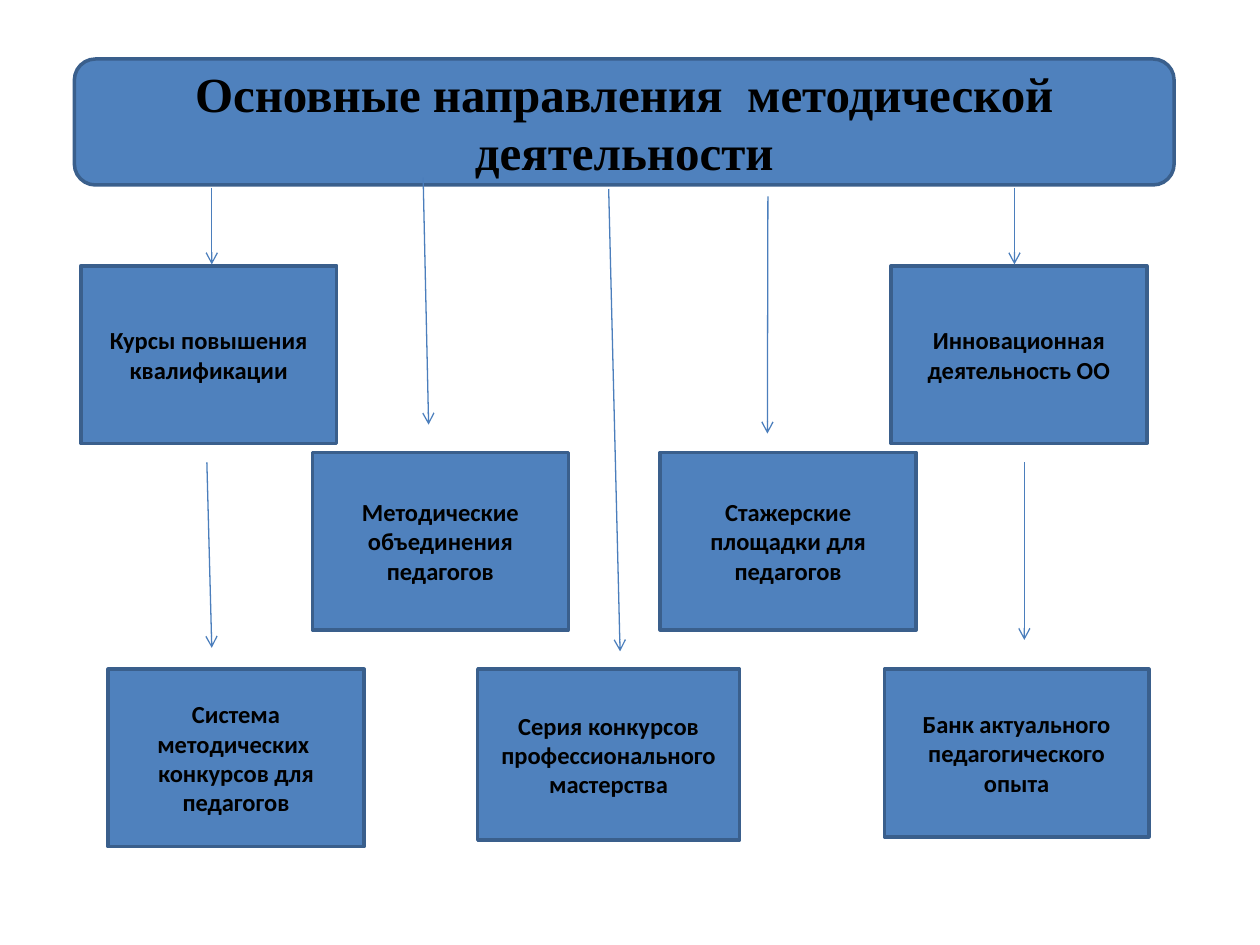
from dataclasses import dataclass

import pptx
import pptx.dml.color
import pptx.enum.shapes
import pptx.enum.text
import pptx.oxml.ns
import pptx.util
from lxml import etree

Cm = pptx.util.Cm
Pt = pptx.util.Pt
Shapes = pptx.enum.shapes.MSO_SHAPE


@dataclass(frozen=True)
class Theme:
    fill: str = "4F81BD"
    border: str = "3A5F8C"
    arrow: str = "4B7EBC"
    text: str = "000000"
    title_font: str = "Times New Roman"
    body_font: str = "Calibri"
    title_size: float = 28
    body_size: float = 14
    border_width: float = 2
    arrow_width: float = 0.75


THEME = Theme()

TITLE = "Основные направления  методической деятельности"
TOP_ROW, MIDDLE_ROW, BOTTOM_ROW = 5.36, 9.12, 13.49
BOX_WIDTH, BOX_HEIGHT = 5.16, 3.58

# Text, left, top, width, height in centimetres
DIRECTIONS = [
    ("Система методических  конкурсов для педагогов", 2.18, BOTTOM_ROW, BOX_WIDTH, BOX_HEIGHT),
    ("Серия конкурсов профессионального мастерства", 9.63, BOTTOM_ROW, 5.28, 3.45),
    ("Методические объединения педагогов", 6.3, MIDDLE_ROW, BOX_WIDTH, BOX_HEIGHT),
    ("Стажерские площадки для педагогов", 13.31, MIDDLE_ROW, BOX_WIDTH, BOX_HEIGHT),
    ("Инновационная деятельность ОО", 17.96, TOP_ROW, BOX_WIDTH, BOX_HEIGHT),
    ("Банк актуального педагогического опыта", 17.83, BOTTOM_ROW, 5.33, 3.38),
    ("Курсы повышения квалификации", 1.63, TOP_ROW, BOX_WIDTH, BOX_HEIGHT),
]

# Start x, start y, end x, end y in centimetres
ARROWS = [
    (8.53, 3.58, 8.64, 8.56),
    (15.48, 3.96, 15.47, 8.74),
    (4.17, 9.32, 4.27, 13.06),
    (4.27, 3.78, 4.27, 5.33),
    (12.27, 3.81, 12.5, 13.13),
    (20.45, 3.78, 20.45, 5.33),
    (20.65, 9.32, 20.65, 12.9),
]


def rgb(code):
    return pptx.dml.color.RGBColor.from_string(code)


def add_box(slide, text, left, top, width, height,
            outline=Shapes.RECTANGLE, font_name=THEME.body_font, size=THEME.body_size):
    box = slide.shapes.add_shape(outline, Cm(left), Cm(top), Cm(width), Cm(height))
    box.shadow.inherit = False
    box.fill.solid()
    box.fill.fore_color.rgb = rgb(THEME.fill)
    box.line.color.rgb = rgb(THEME.border)
    box.line.width = Pt(THEME.border_width)

    frame = box.text_frame
    frame.text = text
    frame.word_wrap = True
    frame.vertical_anchor = pptx.enum.text.MSO_ANCHOR.MIDDLE
    paragraph = frame.paragraphs[0]
    paragraph.alignment = pptx.enum.text.PP_ALIGN.CENTER
    font = paragraph.runs[0].font
    font.name = font_name
    font.size = Pt(size)
    font.bold = True
    font.color.rgb = rgb(THEME.text)


def add_arrow(slide, *ends):
    arrow = slide.shapes.add_connector(
        pptx.enum.shapes.MSO_CONNECTOR.STRAIGHT, *(Cm(end) for end in ends))
    arrow.line.color.rgb = rgb(THEME.arrow)
    arrow.line.width = Pt(THEME.arrow_width)
    qn = pptx.oxml.ns.qn
    etree.SubElement(arrow.line._get_or_add_ln(), qn("a:tailEnd"), type="arrow")
    etree.SubElement(arrow._element.spPr, qn("a:effectLst"))


def main():
    presentation = pptx.Presentation()
    presentation.slide_width = Cm(25.4)
    presentation.slide_height = Cm(19.05)
    slide = presentation.slides.add_slide(presentation.slide_layouts[6])

    add_box(slide, TITLE, 1.5, 1.19, 22.17, 2.54,
            Shapes.ROUNDED_RECTANGLE, THEME.title_font, THEME.title_size)
    for direction in DIRECTIONS:
        add_box(slide, *direction)
    for ends in ARROWS:
        add_arrow(slide, *ends)

    presentation.save("out.pptx")


if __name__ == "__main__":
    main()
